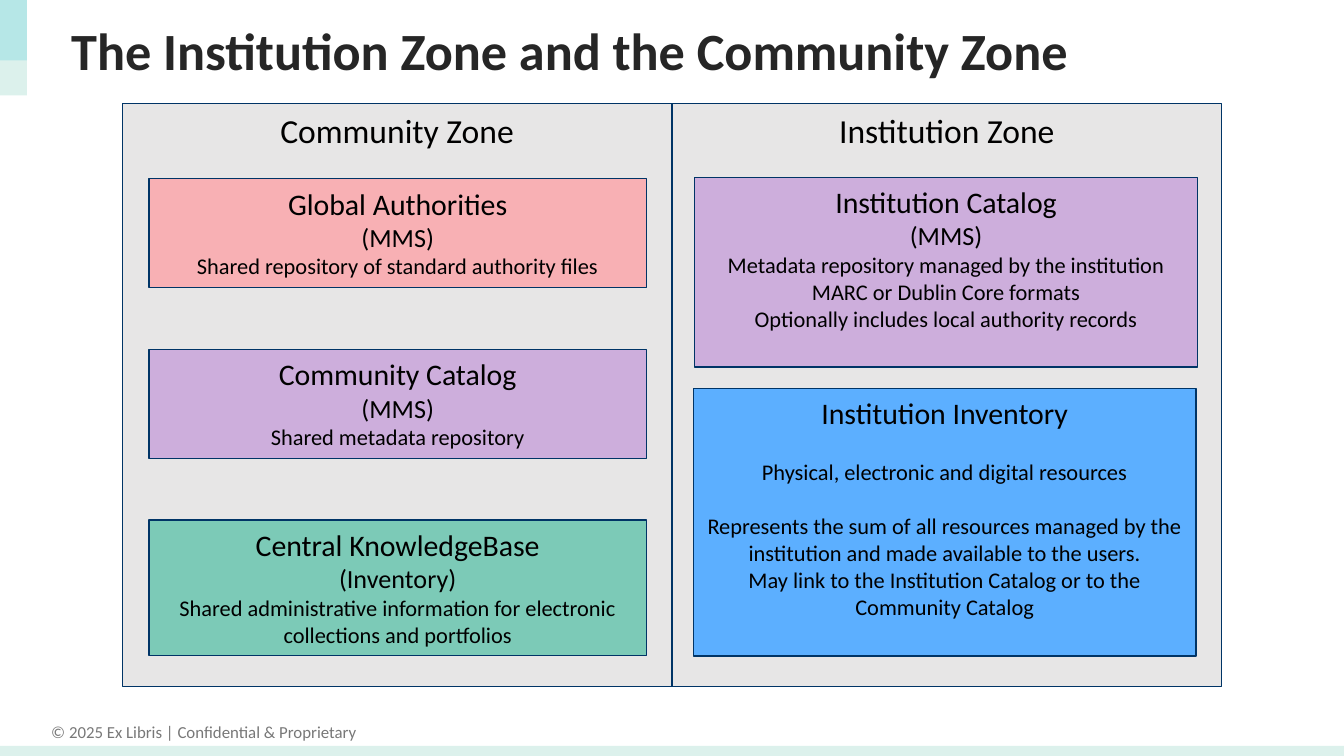
from dataclasses import dataclass

from lxml.etree import SubElement
from pptx import Presentation
from pptx.dml.color import RGBColor
from pptx.enum.shapes import MSO_SHAPE as Shape
from pptx.enum.text import MSO_ANCHOR as Anchor, MSO_AUTO_SIZE as AutoSize, PP_ALIGN as Align
from pptx.oxml.ns import qn
from pptx.util import Inches, Pt


@dataclass(frozen=True)
class Theme:
    """Colours and type sizes of the slide."""
    font: str = "Calibri"
    ink: str = "000000"
    title_ink: str = "262626"
    footer_ink: str = "787878"
    outline: str = "003466"
    panel: str = "E7E6E6"
    mint: str = "DCF1EC"
    aqua: str = "50CFDA"
    authority: str = "F8B0B4"
    catalog: str = "CDAEDC"
    knowledge: str = "7CCAB7"
    inventory: str = "5CAFFF"
    title_size: float = 28
    zone_size: float = 18
    heading_size: float = 16
    module_size: float = 14
    body_size: float = 12
    footer_size: float = 9
    body_gap: float = 14.6


THEME = Theme()


def style_paragraph(paragraph, size, color=THEME.ink, bold=False, align=Align.CENTER):
    """Align a paragraph and format its runs."""
    paragraph.alignment = align
    for run in paragraph.runs:
        run.font.name = THEME.font
        run.font.size = Pt(size)
        run.font.bold = bold
        run.font.color.rgb = RGBColor.from_string(color)


def add_rectangle(slide, box, fill, outline=None, opacity=None):
    """Add a flat rectangle with optional outline and opacity percentage."""
    shape = slide.shapes.add_shape(Shape.RECTANGLE, *map(Inches, box))
    shape.shadow.inherit = False
    shape.fill.solid()
    shape.fill.fore_color.rgb = RGBColor.from_string(fill)
    if outline:
        shape.line.color.rgb = RGBColor.from_string(outline)
        shape.line.width = Pt(0.75)
    else:
        shape.line.fill.background()
    if opacity is not None:
        color = shape.fill._xPr.find(".//" + qn("a:srgbClr"))
        SubElement(color, qn("a:alpha")).set("val", str(opacity * 1000))
    return shape


def add_card(slide, box, fill, lines):
    """Add an outlined box of (text, size, space before) lines."""
    shape = add_rectangle(slide, box, fill, THEME.outline)
    frame = shape.text_frame
    frame.word_wrap = True
    frame.vertical_anchor = Anchor.TOP
    frame.text = "\n".join(text for text, _, _ in lines)
    for paragraph, (_, size, gap) in zip(frame.paragraphs, lines):
        style_paragraph(paragraph, size)
        if gap:
            paragraph.space_before = Pt(gap)


def add_resource(slide, box, fill, heading, module, details, gaps=()):
    """Add a resource card; gaps lists the detail lines set apart from the one above."""
    lines = [(heading, THEME.heading_size, 0)]
    if module:
        lines.append((module, THEME.module_size, 0))
    for index, detail in enumerate(details):
        lines.append((detail, THEME.body_size, THEME.body_gap if index in gaps else 0))
    add_card(slide, box, fill, lines)


def add_footer(slide, text):
    """Add the copyright line."""
    box = slide.shapes.add_textbox(*map(Inches, (0.27, 5.32, 2.49, 0.25)))
    frame = box.text_frame
    frame.word_wrap = False
    frame.auto_size = AutoSize.SHAPE_TO_FIT_TEXT
    frame.text = text
    style_paragraph(frame.paragraphs[0], THEME.footer_size, THEME.footer_ink)


def add_decoration(slide):
    """Add the bottom band and the corner blocks."""
    add_rectangle(slide, (0, 5.55, 10, 0.11), THEME.mint)
    add_rectangle(slide, (0, 0, 0.2, 0.71), THEME.mint)
    add_rectangle(slide, (0, 0, 0.2, 0.45), THEME.aqua, opacity=27)


def set_title(slide, text):
    """Place and format the title placeholder."""
    title = slide.shapes.title
    title.left, title.top, title.width, title.height = map(Inches, (0.43, 0.08, 9.21, 0.63))
    frame = title.text_frame
    frame.text = text
    frame.vertical_anchor = Anchor.MIDDLE
    frame.auto_size = AutoSize.NONE
    paragraph = frame.paragraphs[0]
    paragraph.line_spacing = 0.9
    style_paragraph(paragraph, THEME.title_size, THEME.title_ink, True, Align.LEFT)


def main():
    """Build the slide and save it."""
    presentation = Presentation()
    presentation.slide_width = Inches(10)
    presentation.slide_height = Inches(10 * 9 / 16)
    slide = presentation.slides.add_slide(presentation.slide_layouts[5])

    add_footer(slide, "© 2025 Ex Libris | Confidential & Proprietary")
    add_decoration(slide)
    set_title(slide, "The Institution Zone and the Community Zone")

    zone_width = 4.09
    for column, zone in enumerate(("Community Zone", "Institution Zone")):
        box = (0.91 + column * zone_width, 0.77, zone_width, 4.34)
        add_card(slide, box, THEME.panel, [(zone, THEME.zone_size, 0)])

    community = (
        (0.81, THEME.authority, "Global Authorities", "(MMS)",
         "Shared repository of standard authority files"),
        (0.81, THEME.catalog, "Community Catalog", "(MMS)", "Shared metadata repository"),
        (1.01, THEME.knowledge, "Central KnowledgeBase", "(Inventory)",
         "Shared administrative information for electronic collections and portfolios"),
    )
    for row, (height, fill, heading, module, detail) in enumerate(community):
        box = (1.11, 1.33 + row * 1.27, 3.7, height)
        add_resource(slide, box, fill, heading, module, [detail])

    add_resource(slide, (5.17, 1.32, 3.74, 1.41), THEME.catalog, "Institution Catalog", "(MMS)", [
        "Metadata repository managed by the institution",
        "MARC or Dublin Core formats",
        "Optionally includes local authority records",
    ])
    add_resource(slide, (5.16, 2.89, 3.74, 1.99), THEME.inventory, "Institution Inventory", None, [
        "Physical, electronic and digital resources",
        "Represents the sum of all resources managed by the institution "
        "and made available to the users.",
        "May link to the Institution Catalog or to the Community Catalog",
    ], gaps=(0, 1))

    presentation.save("out.pptx")


if __name__ == "__main__":
    main()
